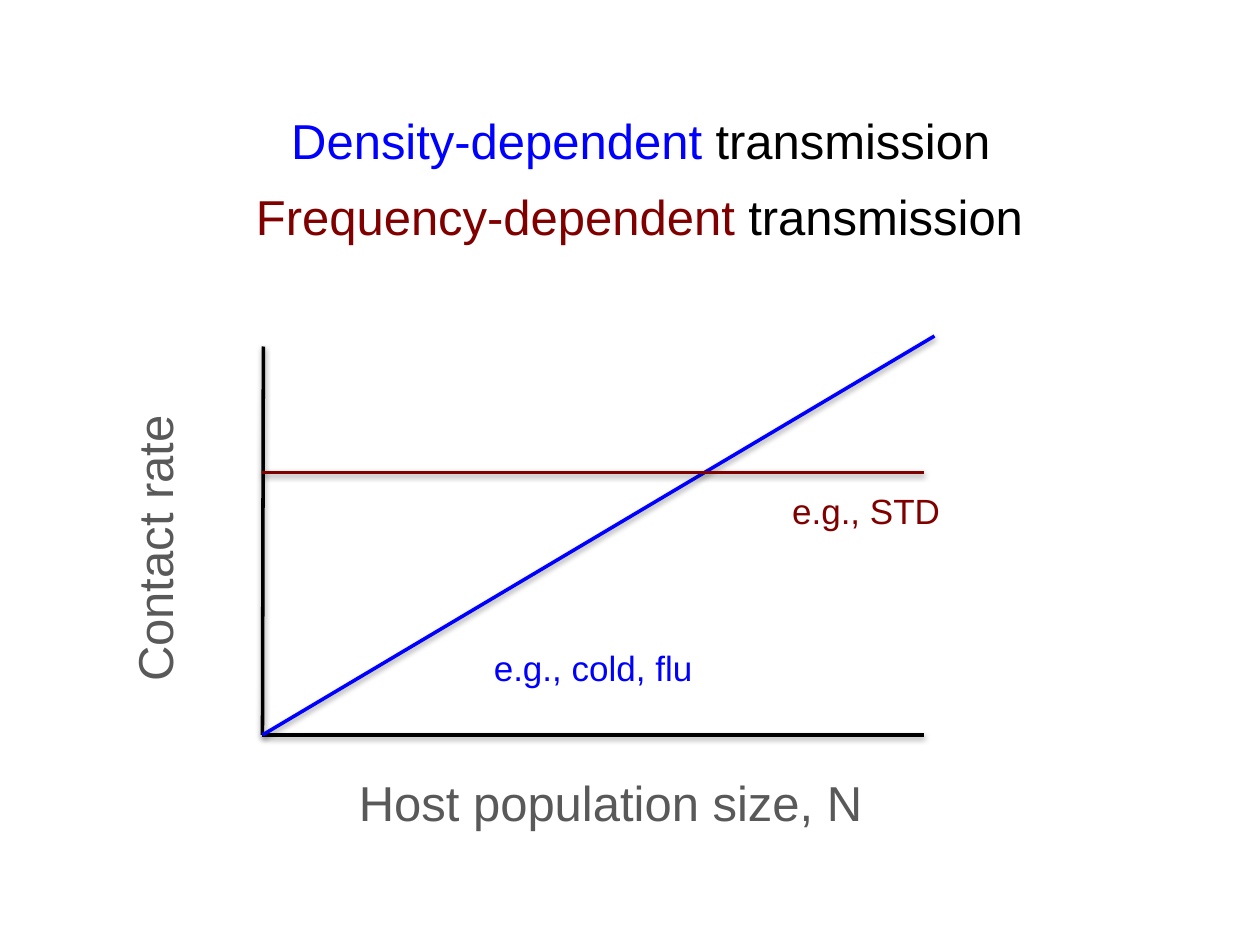
from dataclasses import dataclass
from typing import NamedTuple

from lxml import etree
from pptx import Presentation
from pptx import util as u
from pptx.dml.color import RGBColor
from pptx.enum import shapes, text
from pptx.oxml import ns


@dataclass(frozen=True)
class Theme:
    font: str = "Arial"
    large: float = 28
    small: float = 20
    line: float = 2
    black: str = "000000"
    gray: str = "595959"
    blue: str = "0000FF"
    red: str = "800000"


class Run(NamedTuple):
    words: str
    color: str


class Label(NamedTuple):
    left: float
    top: float
    width: float
    height: float
    size: float
    runs: tuple[Run, ...]
    wrap: bool = True
    turn: float = 0


class Line(NamedTuple):
    start: tuple[float, float]
    end: tuple[float, float]
    color: str


T = Theme()
ORIGIN = (150, 420)
RIGHT = 528
TAIL = " transmission"


def title(left: float, top: float, words: str, color: str) -> Label:
    runs = (Run(words, color), Run(TAIL, T.black))
    return Label(left, top, 658.8, 41, T.large, runs)


def note(left: float, top: float, words: str, color: str) -> Label:
    return Label(left, top, 138, 31.5, T.small, (Run(words, color),))


def axis(left: float, top: float, width: float, words: str, turn: float = 0) -> Label:
    return Label(left, top, width, 41, T.large, (Run(words, T.gray),), False, turn)


ITEMS = (
    title(36.7, 59.8, "Density-dependent", T.blue),
    Line((150.5, 198), ORIGIN, T.black),
    Line(ORIGIN, (RIGHT, 420), T.black),
    axis(193.7, 437.8, 310.3, "Host population size, N"),
    axis(2.2, 293, 171.4, "Contact rate", 270),
    Line(ORIGIN, (534, 192), T.blue),
    note(270, 366, "e.g., cold, flu", T.blue),
    Line((150, 270), (RIGHT, 270), T.red),
    title(36, 103, "Frequency-dependent", T.red),
    note(426, 276, "e.g., STD", T.red),
)


def add_shade(props) -> None:
    effects = etree.SubElement(props, ns.qn("a:effectLst"))
    shade = etree.SubElement(
        effects, ns.qn("a:outerShdw"),
        blurRad=str(u.Pt(3.15)), dist=str(u.Pt(1.57)), dir="5400000", rotWithShape="0",
    )
    tint = etree.SubElement(shade, ns.qn("a:srgbClr"), val=T.black)
    etree.SubElement(tint, ns.qn("a:alpha"), val="38000")


def draw_line(slide, line: Line) -> None:
    ends = [u.Pt(value) for value in line.start + line.end]
    shape = slide.shapes.add_connector(shapes.MSO_CONNECTOR.STRAIGHT, *ends)
    shape.line.width = u.Pt(T.line)
    shape.line.color.rgb = RGBColor.from_string(line.color)
    add_shade(shape._element.spPr)


def draw_label(slide, label: Label) -> None:
    box = slide.shapes.add_textbox(*(u.Pt(value) for value in label[:4]))
    box.rotation = label.turn
    frame = box.text_frame
    frame.word_wrap = label.wrap
    frame.auto_size = text.MSO_AUTO_SIZE.SHAPE_TO_FIT_TEXT
    para = frame.paragraphs[0]
    para.alignment = text.PP_ALIGN.CENTER
    for part in label.runs:
        run = para.add_run()
        run.text = part.words
        run.font.name = T.font
        run.font.size = u.Pt(label.size)
        run.font.color.rgb = RGBColor.from_string(part.color)


def main() -> None:
    deck = Presentation()
    deck.slide_width, deck.slide_height = u.Pt(720), u.Pt(540)
    slide = deck.slides.add_slide(deck.slide_layouts[6])
    for item in ITEMS:
        if isinstance(item, Line):
            draw_line(slide, item)
        else:
            draw_label(slide, item)
    deck.save("out.pptx")


if __name__ == "__main__":
    main()
